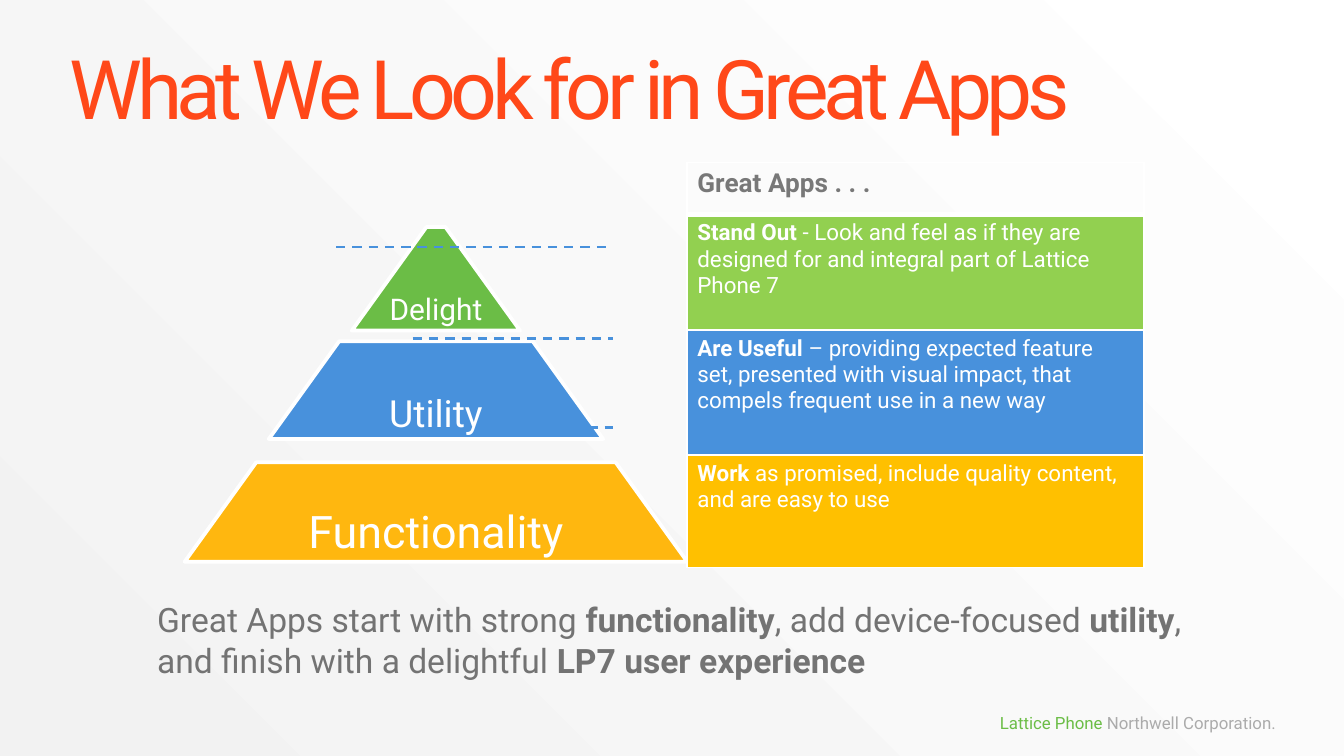
from lxml.etree import fromstring, SubElement
from pptx import Presentation
from pptx.dml.color import RGBColor
from pptx.enum.dml import MSO_LINE
from pptx.enum.shapes import MSO_CONNECTOR, MSO_SHAPE
from pptx.enum.text import MSO_ANCHOR, PP_ALIGN
from pptx.oxml.ns import nsdecls, qn
from pptx.util import Cm, Pt


def color(code):
    return RGBColor.from_string(code)


def write(frame, runs, size, codes, align=PP_ALIGN.LEFT, anchor=MSO_ANCHOR.TOP,
          pad=(0.25, 0.13), bold=(), wrap=True, lead=None, track=None):
    """Fill a frame with one paragraph; bold holds the indexes of bold runs."""
    frame.word_wrap = wrap
    frame.vertical_anchor = anchor
    frame.margin_left = frame.margin_right = Cm(pad[0])
    frame.margin_top = frame.margin_bottom = Cm(pad[1])
    para = frame.paragraphs[0]
    para.alignment = align
    para.line_spacing = lead
    for i, text in enumerate(runs):
        run = para.add_run()
        run.text = text
        run.font.name = "Roboto"
        run.font.size = Pt(size)
        run.font.bold = i in bold
        run.font.color.rgb = color(codes[i % len(codes)])
        if track:
            run.font._element.set("spc", str(track * 100))


deck = Presentation()
deck.slide_width, deck.slide_height = Cm(25.4), Cm(14.29)
slide = deck.slides.add_slide(deck.slide_layouts[5])
shapes = slide.shapes

back = slide.background.fill
back.gradient()
back.gradient_angle = 45
for stop, code in zip(back.gradient_stops, ("F2F2F2", "FFFFFF")):
    stop.color.rgb = color(code)

# Title and footer
title = shapes.title
title.left, title.top, title.width, title.height = Cm(1.07), Cm(0.48), Cm(23.29), Cm(2.59)
write(title.text_frame, ["What We Look for in Great Apps"], 44, ["FF4819"],
      pad=(0.25, 0.23), track=-3)

foot = shapes.add_textbox(Cm(18.29), Cm(13.34), Cm(6.07), Cm(0.64))
write(foot.text_frame, ["Lattice Phone ", "Northwell Corporation."], 9,
      ["6BBD46", "ABABAB"], align=PP_ALIGN.RIGHT, anchor=MSO_ANCHOR.MIDDLE, wrap=False)

# Pyramid, all tiers on one centre line
mid = 8.24
tiers = [
    ("Delight", 4.29, 3.18, 1.96, "6BBD46", 16),
    ("Utility", 6.45, 6.32, 1.85, "4891DC", 20),
    ("Functionality", 8.74, 9.5, 1.88, "FFB70F", 24),
]
for name, top, width, height, code, size in tiers:
    box = Cm(mid - width / 2), Cm(top), Cm(width), Cm(height)
    tier = shapes.add_shape(MSO_SHAPE.TRAPEZOID, *box)
    tier.adjustments[0] = 0.72
    tier.shadow.inherit = False
    tier.fill.solid()
    tier.fill.fore_color.rgb = color(code)
    tier.line.color.rgb = color("FFFFFF")
    tier.line.width = Pt(2)
    label = shapes.add_textbox(*box)
    write(label.text_frame, [name], size, ["FFFFFF"], align=PP_ALIGN.CENTER,
          anchor=MSO_ANCHOR.BOTTOM, pad=(0.06, 0.06), lead=0.9)

# Table of qualities
rows = [
    (0.99, ["Great Apps . . ."], 14, "787878", None),
    (2.18, ["Stand Out ", "- Look and feel as if they are designed for and integral "
            "part of Lattice Phone 7"], 12, "FFFFFF", "92D050"),
    (2.36, ["Are Useful ", "– providing expected feature set, presented with visual "
            "impact, that compels frequent use in a new way"], 12, "FFFFFF", "4891DC"),
    (2.13, ["Work ", "as promised, include quality content, and are easy to use"],
     12, "FFFFFF", "FFC000"),
]
total = sum(row[0] for row in rows)
table = shapes.add_table(len(rows), 1, Cm(12.98), Cm(3.07), Cm(8.64), Cm(total)).table
table.first_row = table.horz_banding = False
for i, (height, runs, size, ink, code) in enumerate(rows):
    table.rows[i].height = Cm(height)
    cell = table.cell(i, 0)
    write(cell.text_frame, runs, size, [ink], bold=(0,))
    cell.margin_left = cell.margin_right = Cm(0.2)
    cell.margin_top = cell.margin_bottom = Cm(0.1)
    cell.vertical_anchor = MSO_ANCHOR.TOP
    if code:
        cell.fill.solid()
        cell.fill.fore_color.rgb = color(code)
    else:
        cell.fill.background()
    props = cell._tc.get_or_add_tcPr()
    for n, side in enumerate("LRTB"):
        thick = 3 if (i, side) in ((0, "B"), (1, "T")) else 1
        props.insert(n, fromstring(
            f'<a:ln{side} {nsdecls("a")} w="{Pt(thick)}"><a:solidFill>'
            f'<a:srgbClr val="FFFFFF"/></a:solidFill></a:ln{side}>'))

# Dashed guides, ending at the same edge
for left, y in ((9.27, 8.08), (7.8, 6.4), (6.35, 4.67)):
    guide = shapes.add_connector(MSO_CONNECTOR.STRAIGHT, Cm(left), Cm(y), Cm(11.58), Cm(y))
    guide.line.color.rgb = color("4891DC")
    guide.line.width = Pt(1.25)
    guide.line.dash_style = MSO_LINE.DASH
    SubElement(guide._element.spPr, qn("a:effectLst"))

# Summary
note = shapes.add_textbox(Cm(2.72), Cm(11.2), Cm(19.96), Cm(1.8))
write(note.text_frame,
      ["Great Apps start with strong ", "functionality", ", add device-focused ",
       "utility", ", and finish with a delightful ", "LP7 user experience"],
      18, ["737373"], bold=(1, 3, 5))

deck.save("out.pptx")
